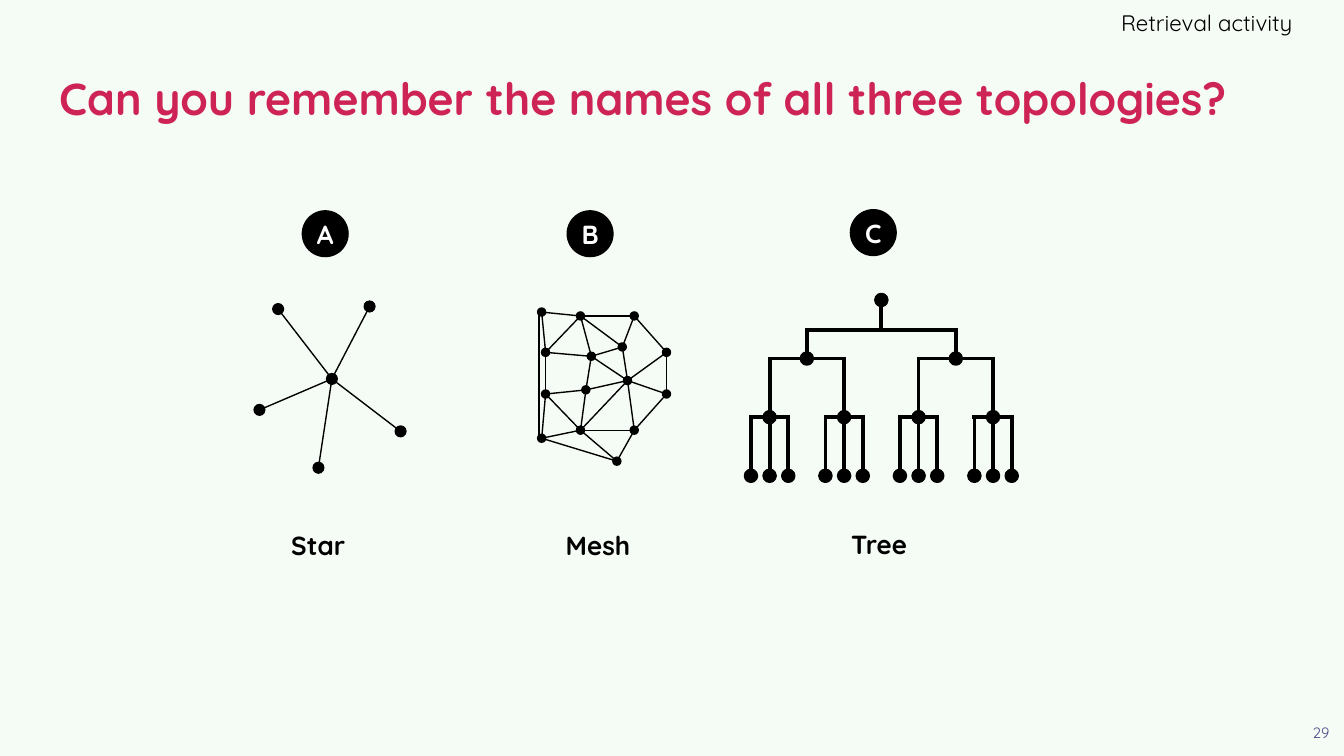
import dataclasses
import math

import lxml.etree
import pptx
import pptx.dml.color
import pptx.enum.shapes
import pptx.enum.text
import pptx.oxml.ns
import pptx.util

Pt = pptx.util.Pt
Align = pptx.enum.text.PP_ALIGN
Anchor = pptx.enum.text.MSO_ANCHOR


@dataclasses.dataclass(frozen=True)
class Theme:
    font: str = "Quicksand"
    background: str = "F5FBF5"
    title: str = "CD2355"
    ink: str = "000000"
    inverse: str = "FFFFFF"
    number: str = "494985"
    title_size: float = 24
    label_size: float = 14
    tag_size: float = 12
    number_size: float = 8
    thin: float = 0.75
    thick: float = 2


THEME = Theme()
BADGE = 24.5
LABEL_TOP = 163.5
LARGE_DOT = 5.76
SMALL_DOT = 4.32

STAR_HUB = (41.8, 42)
STAR_TIPS = [(13, 4.6), (62, 3.2), (78.6, 70.1), (34.6, 89.6), (3, 58.6)]

MESH_NODES = {
    "a": (2.2, 2.2), "b": (23, 4.3), "c": (51.8, 4.3), "d": (69.1, 23.8),
    "e": (69.1, 46.1), "f": (51.8, 65.5), "g": (23, 65.5), "h": (4.3, 46.1),
    "i": (4.3, 23.8), "j": (2.2, 69.8), "k": (28.8, 25.9), "l": (25.9, 43.9),
    "m": (48.2, 38.9), "n": (45.4, 20.9), "o": (42.5, 82.1),
}
MESH_EDGES = (
    "bc cd de ef fg gh hi ib ai ab hj jg jo go fo lg "
    "lh kl ik bk bn nc kn lm km nm md me mf mg"
).split()

TREE_STEP = 31.4
TREE_BAR = 16
TREE_SPACING = 39.9
LEAF_SPACING = 10


def color(value):
    return pptx.dml.color.RGBColor.from_string(value)


def write(shape, text, size, ink, bold=False, align=Align.LEFT,
          anchor=Anchor.TOP, insets=(7.2, 7.2, 7.2, 7.2)):
    frame = shape.text_frame
    frame.word_wrap = True
    frame.auto_size = pptx.enum.text.MSO_AUTO_SIZE.NONE
    frame.vertical_anchor = anchor
    (frame.margin_left, frame.margin_top,
     frame.margin_right, frame.margin_bottom) = map(Pt, insets)
    paragraph = frame.paragraphs[0]
    paragraph.alignment = align
    paragraph.space_before = Pt(0)
    run = paragraph.add_run()
    run.text = text
    run.font.name = THEME.font
    run.font.size = Pt(size)
    run.font.bold = bold
    run.font.color.rgb = color(ink)


def place(shape, left, top, width, height):
    shape.left, shape.top = Pt(left), Pt(top)
    shape.width, shape.height = Pt(width), Pt(height)


def add_circle(shapes, center, diameter, weight=THEME.thin):
    x, y = center
    circle = shapes.add_shape(
        pptx.enum.shapes.MSO_SHAPE.OVAL, Pt(x - diameter / 2),
        Pt(y - diameter / 2), Pt(diameter), Pt(diameter))
    circle.shadow.inherit = False
    circle.fill.solid()
    circle.fill.fore_color.rgb = color(THEME.ink)
    circle.line.color.rgb = color(THEME.ink)
    circle.line.width = Pt(weight)
    return circle


def add_line(shapes, start, end, weight=THEME.thin):
    connector = shapes.add_connector(
        pptx.enum.shapes.MSO_CONNECTOR.STRAIGHT, *map(Pt, (*start, *end)))
    connector.line.color.rgb = color(THEME.ink)
    connector.line.width = Pt(weight)
    lxml.etree.SubElement(
        connector._element.spPr, pptx.oxml.ns.qn("a:effectLst"))


def add_edge(shapes, start, end, diameter):
    share = diameter / 2 / math.dist(start, end)
    dx, dy = ((b - a) * share for a, b in zip(start, end))
    add_line(shapes, (start[0] + dx, start[1] + dy), (end[0] - dx, end[1] - dy))


def draw_star(shapes, left, top):
    hub, *tips = [(left + x, top + y) for x, y in [STAR_HUB, *STAR_TIPS]]
    for tip in tips:
        add_edge(shapes, hub, tip, LARGE_DOT)
    for node in [hub, *tips]:
        add_circle(shapes, node, LARGE_DOT)


def draw_mesh(shapes, left, top):
    nodes = {name: (left + x, top + y) for name, (x, y) in MESH_NODES.items()}
    for start, end in MESH_EDGES:
        add_edge(shapes, nodes[start], nodes[end], SMALL_DOT)
    add_line(shapes, (left + 0.7, top + 3.6), (left + 0.7, top + 68.4))
    for node in nodes.values():
        add_circle(shapes, node, SMALL_DOT)


def draw_tree(shapes, left, top):
    group = shapes.add_group_shape().shapes
    parents = [left + LEAF_SPACING + TREE_SPACING * i for i in range(4)]
    middles = [sum(parents[i:i + 2]) / 2 for i in (0, 2)]
    root = sum(middles) / 2
    leaves = [[x + LEAF_SPACING * k for k in (-1, 0, 1)] for x in parents]
    levels = [top + TREE_STEP * i for i in range(4)]
    families = [
        (top + TREE_BAR, levels[1], middles),
        (levels[1], levels[2], parents[:2]),
        (levels[1], levels[2], parents[2:]),
        *((levels[2], levels[3], family) for family in leaves),
    ]
    add_line(group, (root, top), (root, top + TREE_BAR), THEME.thick)
    for bar, bottom, children in families:
        add_line(group, (children[0] - THEME.thick / 2, bar),
                 (children[-1] + THEME.thick / 2, bar), THEME.thick)
        for x in children:
            add_line(group, (x, bar), (x, bottom), THEME.thick)
    for y, row in zip(levels, [[root], middles, parents, sum(leaves, [])]):
        for x in row:
            add_circle(group, (x, y), LARGE_DOT, THEME.thick)


def add_topology(slide, left, top, letter, name, draw, badge_left,
                 drawing_top, label_left):
    shapes = slide.shapes
    draw(shapes, left, top + drawing_top)
    center = (left + badge_left + BADGE / 2, top + BADGE / 2)
    badge = add_circle(shapes, center, BADGE)
    write(badge, letter, THEME.label_size, THEME.inverse, True,
          Align.CENTER, Anchor.MIDDLE, (0, 0, 0, 0))
    badge.text_frame.word_wrap = False
    label = shapes.add_textbox(
        Pt(left + label_left), Pt(top + LABEL_TOP), Pt(59), Pt(31.7))
    write(label, name, THEME.label_size, THEME.ink, True, Align.CENTER)


def add_header(slide, left, top, width):
    title, tag = slide.shapes.title, slide.placeholders[1]
    place(title, left, top + 24.5, width, 55.4)
    write(title, "Can you remember the names of all three topologies?",
          THEME.title_size, THEME.title, True, anchor=Anchor.MIDDLE)
    place(tag, left + width - 157, top, 154, 24.5)
    write(tag, "Retrieval activity", THEME.tag_size, THEME.ink,
          align=Align.RIGHT, anchor=Anchor.MIDDLE, insets=(7.2, 7.2, 0, 7.2))


def add_slide_number(slide, left, top, size):
    box = slide.shapes.add_textbox(Pt(left), Pt(top), Pt(size), Pt(size))
    write(box, "29", THEME.number_size, THEME.number, align=Align.CENTER)


def main():
    presentation = pptx.Presentation()
    presentation.slide_width, presentation.slide_height = Pt(720), Pt(405)
    slide = presentation.slides.add_slide(presentation.slide_layouts[0])
    slide.background.fill.solid()
    slide.background.fill.fore_color.rgb = color(THEME.background)
    add_header(slide, 24.5, 0, 671)
    add_topology(slide, 136, 113, "A", "Star", draw_star, 26, 48, 5)
    add_topology(slide, 288, 113, "B", "Mesh", draw_mesh, 15.9, 52, 2.9)
    add_topology(slide, 402.3, 112.4, "C", "Tree", draw_tree, 53.3, 48.3, 39.1)
    add_slide_number(slide, 695.5, 380.2, 24.5)
    presentation.save("out.pptx")


if __name__ == "__main__":
    main()
